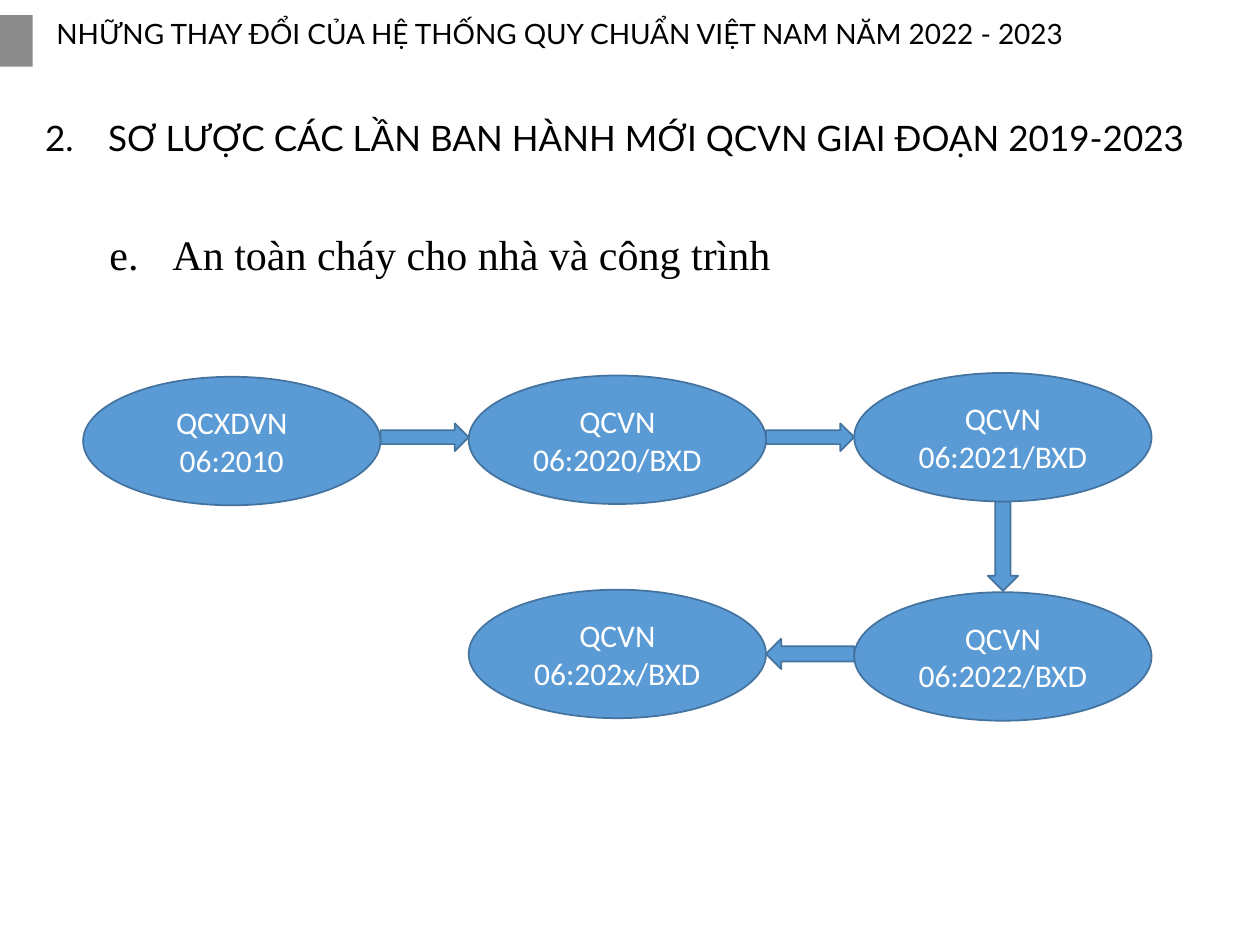
from lxml.etree import SubElement
from pptx import Presentation
from pptx.dml.color import RGBColor
from pptx.enum.shapes import MSO_SHAPE
from pptx.enum.text import MSO_ANCHOR, PP_ALIGN
from pptx.oxml.ns import qn
from pptx.util import Inches, Pt


def color(hex_string):
    return RGBColor.from_string(hex_string)


class SlideBuilder:
    BLUE, OUTLINE, GRAY = "5B9BD5", "43739E", "808080"
    BLACK, WHITE = "000000", "FFFFFF"

    def __init__(self, slide):
        self.slide = slide

    def shape(self, kind, left, top, width, height, fill=BLUE, outline=OUTLINE):
        shape = self.slide.shapes.add_shape(
            kind, Inches(left), Inches(top), Inches(width), Inches(height))
        shape.shadow.inherit = False
        shape.fill.solid()
        shape.fill.fore_color.rgb = color(fill)
        if outline:
            shape.line.color.rgb = color(outline)
            shape.line.width = Pt(1)
        else:
            shape.line.fill.background()
        return shape

    def marker(self, left, top, width, height, opacity):
        """Draw a borderless gray block with the given opacity in percent."""
        block = self.shape(MSO_SHAPE.RECTANGLE, left, top, width, height, self.GRAY, None)
        tint = block.fill._xPr.find(qn("a:solidFill"))[0]
        SubElement(tint, qn("a:alpha"), val=str(opacity * 1000))

    def span(self, para, text, size, font, ink):
        span = para.add_run()
        span.text = text
        span.font.size = Pt(size)
        span.font.name = font
        span.font.color.rgb = color(ink)

    def standard(self, text, left, top, width, height):
        """Draw an ellipse that names one edition of the standard."""
        ellipse = self.shape(MSO_SHAPE.OVAL, left, top, width, height)
        frame = ellipse.text_frame
        frame.word_wrap = True
        frame.vertical_anchor = MSO_ANCHOR.MIDDLE
        para = frame.paragraphs[0]
        para.alignment = PP_ALIGN.CENTER
        self.span(para, text, 18, "Calibri", self.WHITE)

    def heading(self, text, left, top, width, height, size, font="Lato", numbering=None):
        """Add a heading; numbering is an optional (scheme, first number) pair."""
        box = self.slide.shapes.add_textbox(
            Inches(left), Inches(top), Inches(width), Inches(height))
        frame = box.text_frame
        frame.word_wrap = True
        para = frame.paragraphs[0]
        para.line_spacing = 0.9
        if numbering:
            scheme, start = numbering
            properties = para._p.get_or_add_pPr()
            properties.set("marL", str(Inches(0.5)))
            properties.set("indent", str(Inches(-0.5)))
            SubElement(properties, qn("a:buFont"), typeface="+mj-lt")
            SubElement(properties, qn("a:buAutoNum"), type=scheme, startAt=str(start))
        self.span(para, text, size, font, self.BLACK)


def main():
    deck = Presentation()
    deck.slide_width, deck.slide_height = Inches(10), Inches(7.5)
    builder = SlideBuilder(deck.slides.add_slide(deck.slide_layouts[6]))

    builder.marker(0, 0.12, 0.26, 0.41, opacity=91)
    builder.heading("NHỮNG THAY ĐỔI CỦA HỆ THỐNG QUY CHUẨN VIỆT NAM NĂM 2022 - 2023",
                    0.35, 0.11, 8.94, 0.42, 16)
    builder.heading("SƠ LƯỢC CÁC LẦN BAN HÀNH MỚI QCVN GIAI ĐOẠN 2019-2023",
                    0.26, 0.91, 9.27, 0.35, 20, numbering=("arabicPeriod", 2))
    builder.heading("An toàn cháy cho nhà và công trình",
                    0.77, 1.81, 7.55, 0.35, 24, "Times New Roman", ("alphaLcPeriod", 5))

    width, height, gap = 2.36, 1.02, 0.7
    columns = [0.66 + column * (width + gap) for column in range(3)]
    standards = [
        ("QCXDVN 06:2010", 0, 2.99),
        ("QCVN 06:2020/BXD", 1, 2.98),
        ("QCVN 06:2021/BXD", 2, 2.96),
        ("QCVN 06:2022/BXD", 2, 4.7),
        ("QCVN 06:202x/BXD", 1, 4.68),
    ]

    for column in (0, 1):
        builder.shape(MSO_SHAPE.RIGHT_ARROW, columns[column] + width, 3.36, gap, 0.22)
    builder.shape(MSO_SHAPE.DOWN_ARROW, columns[2] + (width - 0.24) / 2, 3.98, 0.24, 0.71)
    builder.shape(MSO_SHAPE.LEFT_ARROW, columns[1] + width, 5.07, gap, 0.24)
    for text, column, top in standards:
        builder.standard(text, columns[column], top, width, height)

    deck.save("out.pptx")


if __name__ == "__main__":
    main()
